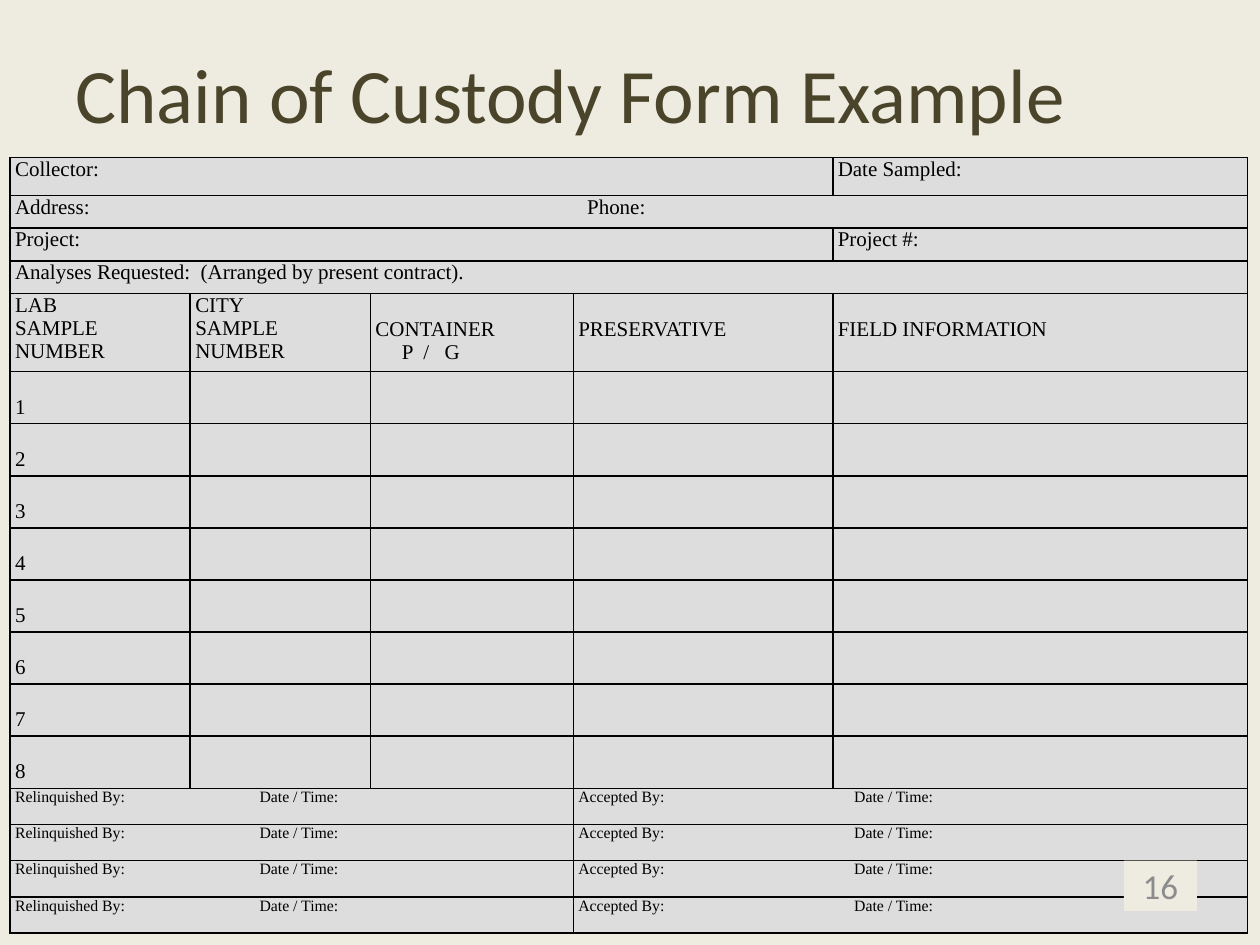
from lxml.etree import SubElement
from pptx import Presentation
from pptx.dml.color import RGBColor
from pptx.enum.shapes import MSO_SHAPE
from pptx.enum.text import MSO_ANCHOR, PP_ALIGN
from pptx.oxml.ns import qn
from pptx.util import Inches, Pt

COLORS = {"page": "EEECE1", "title": "4A452A", "cell": "DDDDDD",
          "ink": "000000", "number": "8C8C8C"}
WIDTHS = [1.43, 1.43, 1.61, 2.06, 3.29]
HEIGHTS = [0.3] + [0.26] * 3 + [0.62] + [3.31 / 8] * 8 + [1.15 / 4] * 4
LINE = 0.19


class Form:
    """Holds the style and the current slide of a printed form."""

    def __init__(self, deck):
        self.slide = deck.slides.add_slide(deck.slide_layouts[6])
        self.paint(self.slide.background.fill, "page")

    def paint(self, fill, color):
        fill.solid()
        fill.fore_color.rgb = RGBColor.from_string(COLORS[color])

    def label(self, frame, text, size, color, face="Calibri", tabs=()):
        frame.text = text
        for para in frame.paragraphs:
            if tabs:
                stops = SubElement(para._p.get_or_add_pPr(), qn("a:tabLst"))
                for stop in tabs:
                    SubElement(stops, qn("a:tab"), pos=str(Inches(stop)), algn="l")
            font = para.font
            font.name, font.size = face, Pt(size)
            font.color.rgb = RGBColor.from_string(COLORS[color])

    def title(self, text, *box):
        frame = self.slide.shapes.add_textbox(*map(Inches, box)).text_frame
        frame.word_wrap = True
        frame.vertical_anchor = MSO_ANCHOR.MIDDLE
        self.label(frame, text, 44, "title")

    def number(self, text, *box):
        shape = self.slide.shapes.add_shape(MSO_SHAPE.RECTANGLE, *map(Inches, box))
        shape.shadow.inherit = False
        self.paint(shape.fill, "page")
        shape.line.fill.background()
        frame = shape.text_frame
        frame.vertical_anchor = MSO_ANCHOR.MIDDLE
        self.label(frame, text, 20, "number")
        frame.paragraphs[0].alignment = PP_ALIGN.CENTER

    def table(self, left, top):
        frame = self.slide.shapes.add_table(
            len(HEIGHTS), len(WIDTHS), Inches(left), Inches(top),
            Inches(sum(WIDTHS)), Inches(sum(HEIGHTS)))
        grid = frame.table
        grid.first_row = grid.horz_banding = False
        for col, width in zip(grid.columns, WIDTHS):
            col.width = Inches(width)
        for row, height in zip(grid.rows, HEIGHTS):
            row.height = Inches(height)
        for cell in grid.iter_cells():
            self.border(cell)
        return grid

    def border(self, cell):
        cell.margin_left = cell.margin_right = Inches(0.04)
        cell.margin_top = cell.margin_bottom = 0
        for side in ("a:lnL", "a:lnR", "a:lnT", "a:lnB"):
            line = SubElement(cell._tc.get_or_add_tcPr(), qn(side), w=str(Pt(1)))
            fill = SubElement(line, qn("a:solidFill"))
            SubElement(fill, qn("a:srgbClr"), val=COLORS["ink"])
        self.paint(cell.fill, "cell")
        self.label(cell.text_frame, "", 12, "ink", "Times New Roman")

    def entry(self, grid, row, col, text, span=1, size=12, drop=0, tabs=()):
        cell = grid.cell(row, col)
        if span > 1:
            cell.merge(grid.cell(row, col + span - 1))
        cell.margin_top = Inches(drop)
        self.label(cell.text_frame, text, size, "ink", "Times New Roman", tabs)


def main():
    deck = Presentation()
    deck.slide_width, deck.slide_height = Inches(10), Inches(7.5)
    form = Form(deck)
    form.title("Chain of Custody Form Example", 0.5, 0.3, 9, 0.87)
    grid = form.table(0.08, 1.25)

    form.entry(grid, 0, 0, "Collector:", 4)
    form.entry(grid, 0, 4, "Date Sampled:")
    form.entry(grid, 1, 0, "Address:\tPhone:", 5, tabs=[4.54])
    form.entry(grid, 2, 0, "Project:", 4)
    form.entry(grid, 2, 4, "Project #:")
    form.entry(grid, 3, 0, "Analyses Requested:  (Arranged by present contract).", 5)

    heads = [("LAB\nSAMPLE\nNUMBER", 0), ("CITY\nSAMPLE\nNUMBER", 0),
             ("CONTAINER\n\tP\t/\tG", LINE), ("PRESERVATIVE", LINE),
             ("FIELD INFORMATION", LINE)]
    for col, (text, drop) in enumerate(heads):
        form.entry(grid, 4, col, text, drop=drop, tabs=[0.21, 0.38, 0.55])
    for item in range(1, 9):
        form.entry(grid, 4 + item, 0, str(item), drop=LINE)
    for row in range(13, 17):
        form.entry(grid, row, 0, "Relinquished By:\tDate / Time:", 3, 9, tabs=[1.94])
        form.entry(grid, row, 3, "Accepted By:\tDate / Time:", 2, 9, tabs=[2.19])

    form.number("16", 8.92, 6.83, 0.58, 0.4)
    deck.save("out.pptx")


if __name__ == "__main__":
    main()
